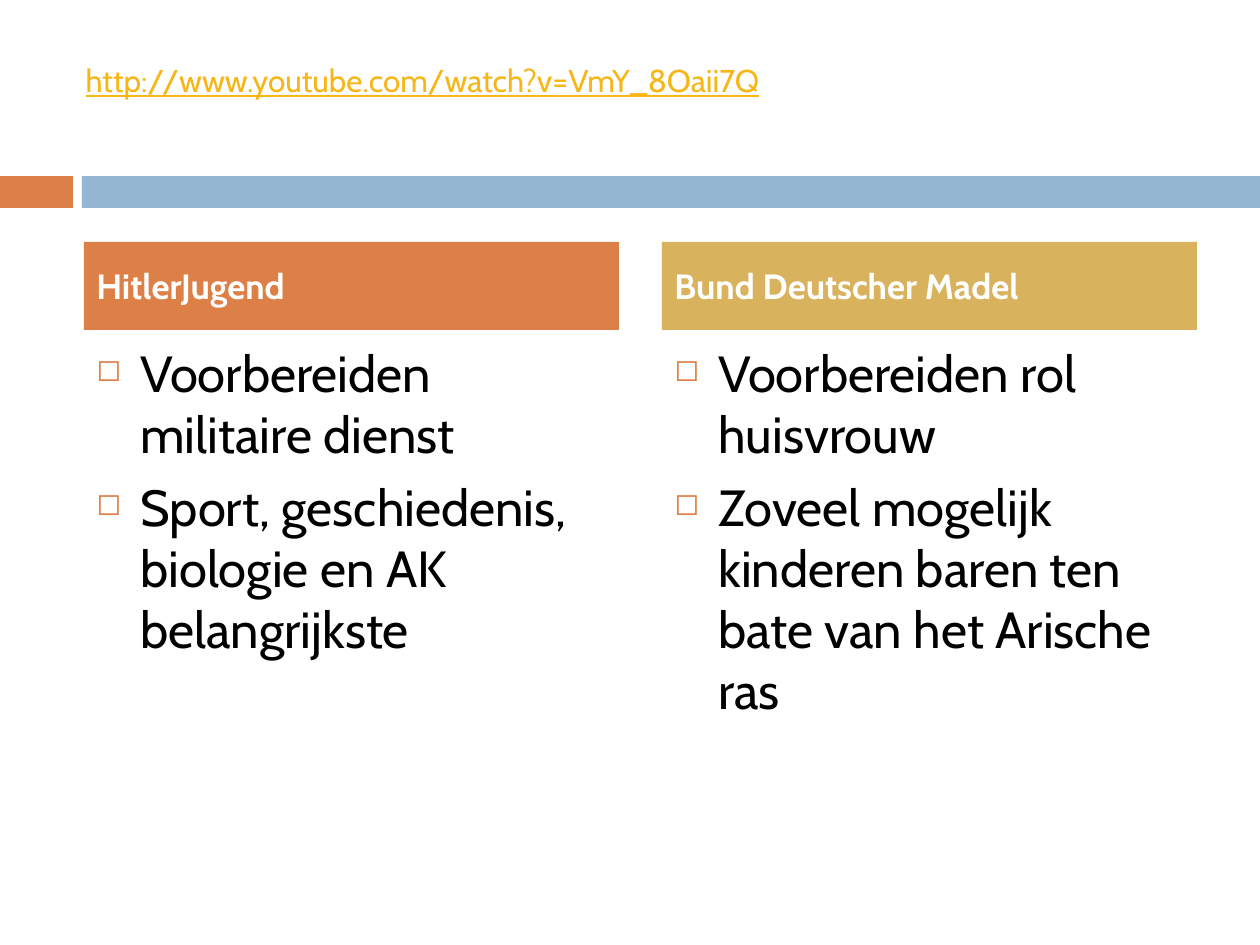
from dataclasses import dataclass

from pptx import Presentation
from pptx import util as u
from pptx.dml.color import RGBColor
from pptx.enum import shapes, text
from pptx.oxml.ns import qn
from lxml import etree

HEX = {"orange": "DD8047", "blue": "94B6D2", "gold": "D8B25C",
       "link": "F7B615", "black": "000000", "white": "FFFFFF"}
FONT = "Cabin"


@dataclass
class Column:
    left: int
    color: str
    head: str
    points: list[str]


COLS = [
    Column(84, "orange", "HitlerJugend",
           ["Voorbereiden militaire dienst",
            "Sport, geschiedenis, biologie en AK belangrijkste"]),
    Column(662, "gold", "Bund Deutscher Madel",
           ["Voorbereiden rol huisvrouw",
            "Zoveel mogelijk kinderen baren ten bate van het Arische ras"]),
]
WIDTH = 535


def px(n: int) -> int:
    return u.Inches(n / 126)


def rgb(name: str) -> RGBColor:
    return RGBColor.from_string(HEX[name])


def style(para, size: int, color: str, bold: bool = False) -> None:
    font = para.font
    font.name, font.size, font.bold = FONT, u.Pt(size), bold
    font.color.rgb = rgb(color)


def bar(slide, left: int, top: int, width: int, height: int, color: str):
    box = slide.shapes.add_shape(shapes.MSO_SHAPE.RECTANGLE,
                                 px(left), px(top), px(width), px(height))
    box.shadow.inherit = False
    box.fill.solid()
    box.fill.fore_color.rgb = rgb(color)
    box.line.fill.background()
    return box


def bullet(para) -> None:
    props = para._p.get_or_add_pPr()
    props.set("marL", str(px(44)))
    props.set("indent", str(-px(44)))
    tint = etree.SubElement(props, qn("a:buClr"))
    etree.SubElement(tint, qn("a:srgbClr"), val=HEX["orange"])
    etree.SubElement(props, qn("a:buSzPct"), val="60000")
    etree.SubElement(props, qn("a:buChar"), char="◻")


def column(slide, col: Column) -> None:
    # Coloured heading
    head = bar(slide, col.left, 242, WIDTH, 88, col.color)
    frame = head.text_frame
    frame.word_wrap = True
    frame.vertical_anchor = text.MSO_ANCHOR.MIDDLE
    para = frame.paragraphs[0]
    para.text = col.head
    para.alignment = text.PP_ALIGN.LEFT
    style(para, 20, "white", bold=True)

    # Bulleted points
    body = slide.shapes.add_textbox(px(col.left), px(336), px(WIDTH), px(494))
    frame = body.text_frame
    frame.word_wrap = True
    for i, point in enumerate(col.points):
        para = frame.add_paragraph() if i else frame.paragraphs[0]
        para.text = point
        bullet(para)
        if i:
            para.space_before = u.Pt(7)
        style(para, 29, "black")


def main() -> None:
    deck = Presentation()
    deck.slide_width, deck.slide_height = px(1260), px(945)
    slide = deck.slides.add_slide(deck.slide_layouts[5])

    # Band under the title
    bar(slide, 0, 176, 73, 32, "orange")
    bar(slide, 82, 176, 1178, 32, "blue")

    # Title, raised by a deeper bottom margin
    title = slide.shapes.title
    title.left, title.top = px(73), px(38)
    title.width, title.height = px(1124), px(120)
    frame = title.text_frame
    frame.vertical_anchor = text.MSO_ANCHOR.MIDDLE
    frame.margin_bottom = px(42)
    para = frame.paragraphs[0]
    para.text = "http://www.youtube.com/watch?v=VmY_8Oaii7Q"
    para.alignment = text.PP_ALIGN.LEFT
    style(para, 18, "link")
    para.font.underline = True

    for col in COLS:
        column(slide, col)
    deck.save("out.pptx")


if __name__ == "__main__":
    main()
